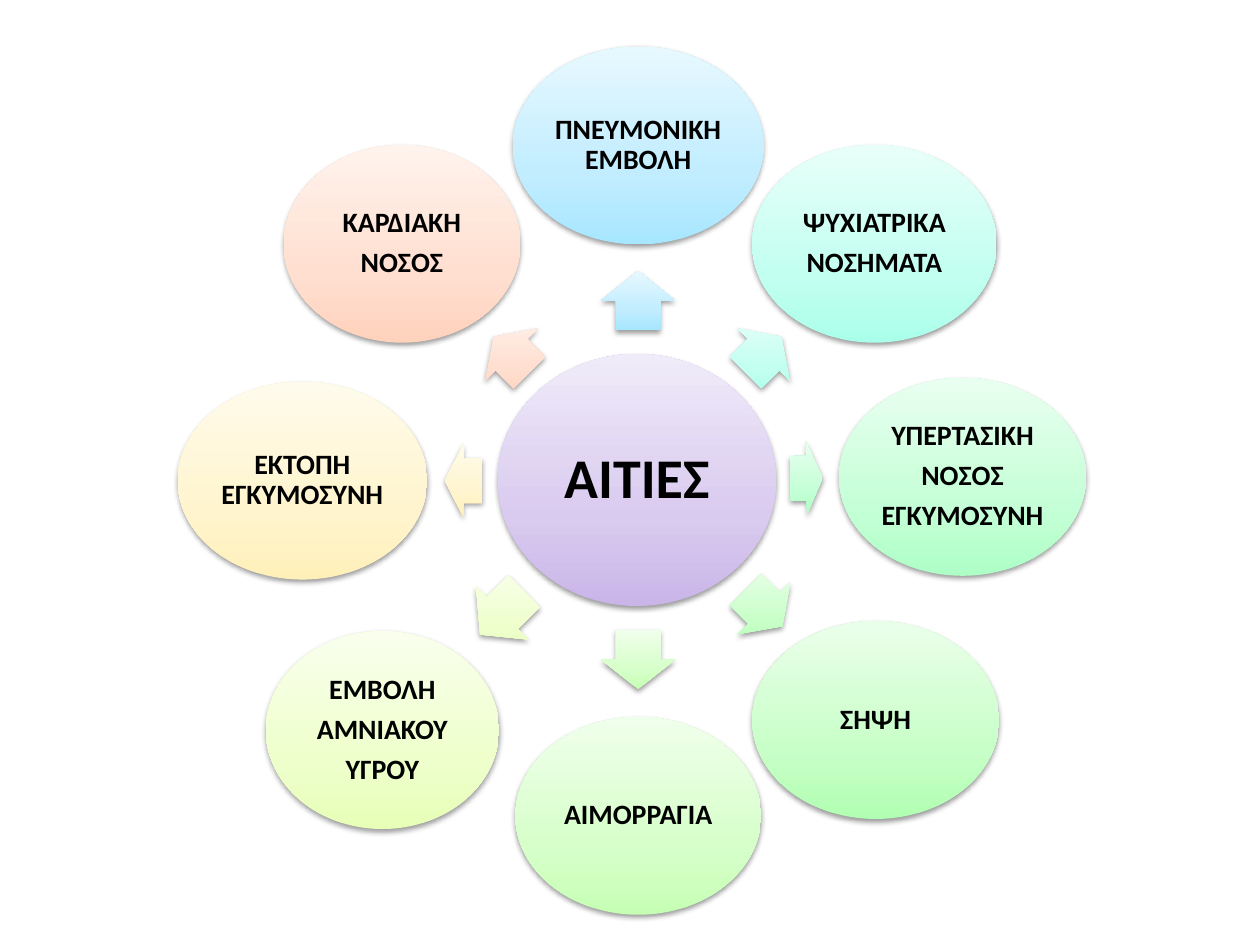
import pptx
import pptx.dml.color
import pptx.enum.shapes
import pptx.enum.text
import pptx.oxml
import pptx.oxml.ns
import pptx.util

RGBColor = pptx.dml.color.RGBColor
MSO_SHAPE = pptx.enum.shapes.MSO_SHAPE

BLACK = RGBColor(0x00, 0x00, 0x00)
VIOLET = RGBColor(0xC9, 0xB5, 0xE8)
SKY = RGBColor(0xA7, 0xE6, 0xFF)
AQUA = RGBColor(0xAA, 0xFF, 0xEA)
MINT = RGBColor(0xAE, 0xFF, 0xC6)
GREEN = RGBColor(0xB1, 0xFF, 0xB2)
SPRING = RGBColor(0xC6, 0xFF, 0xB4)
LIME = RGBColor(0xE7, 0xFF, 0xB7)
YELLOW = RGBColor(0xFF, 0xF0, 0xBA)
PEACH = RGBColor(0xFF, 0xD2, 0xBD)

COLUMNS, ROWS = 100, 75
CAUSE_HEIGHT, ARROW_HEIGHT = 15.7, 5.9
GRADIENT_STOPS = ((0, 1), (35, 0.71), (100, 0.27))

# lines, colour, ellipse (centre column, centre row, width), arrow (centre column, centre row, length, angle)
CAUSES = (
    (("ΠΝΕΥΜΟΝΙΚΗ ΕΜΒΟΛΗ",), SKY, (50.65, 11.55, 19.9), (50.65, 23.85, 4.7, 270)),
    (("ΨΥΧΙΑΤΡΙΚΑ", "ΝΟΣΗΜΑΤΑ"), AQUA, (69.4, 19.35, 19.4), (60.6, 28.15, 4, 315)),
    (("ΥΠΕΡΤΑΣΙΚΗ", "ΝΟΣΟΣ", "ΕΓΚΥΜΟΣΥΝΗ"), MINT, (76.4, 37.85, 19.6), (64, 37.95, 2.6, 359.2)),
    (("ΣΗΨΗ",), GREEN, (69.5, 57.15, 19.6), (60.65, 48.25, 4.1, 45.1)),
    (("ΑΙΜΟΡΡΑΓΙΑ",), SPRING, (50.65, 64.75, 19.5), (50.65, 52.35, 4.7, 90)),
    (("ΕΜΒΟΛΗ", "ΑΜΝΙΑΚΟΥ", "ΥΓΡΟΥ"), LIME, (30.35, 57.95, 18.5), (39.85, 48.65, 4.9, 135.6)),
    (("ΕΚΤΟΠΗ ΕΓΚΥΜΟΣΥΝΗ",), YELLOW, (24, 38.15, 19.8), (36.8, 38.15, 3, 180)),
    (("ΚΑΡΔΙΑΚΗ", "ΝΟΣΟΣ"), PEACH, (31.9, 19.35, 18.8), (40.6, 28.15, 4, 225.2)),
)


class RadialSlide:
    """Draws softly shaded shapes on one slide, placed by their centres on a grid."""

    def __init__(self, presentation):
        self.slide = presentation.slides.add_slide(presentation.slide_layouts[6])
        self.column = presentation.slide_width / COLUMNS
        self.row = presentation.slide_height / ROWS
        self.font = "Calibri"

    def shade(self, shape, colour):
        stops = ""
        for position, strength in GRADIENT_STOPS:
            tint = RGBColor(*(round(255 - (255 - channel) * strength) for channel in colour))
            stops += f'<a:gs pos="{position * 1000}"><a:srgbClr val="{tint}"/></a:gs>'
        namespace = pptx.oxml.ns.nsdecls("a")
        gradient = pptx.oxml.parse_xml(
            f'<a:gradFill {namespace} rotWithShape="0"><a:gsLst>{stops}</a:gsLst>'
            '<a:lin ang="16200000" scaled="0"/></a:gradFill>')
        shadow = pptx.oxml.parse_xml(
            f'<a:outerShdw {namespace} blurRad="{pptx.util.Pt(3.1)}" dist="{pptx.util.Pt(1.6)}"'
            ' dir="5400000" rotWithShape="0"><a:srgbClr val="000000">'
            '<a:alpha val="38000"/></a:srgbClr></a:outerShdw>')
        shape.line.fill.background()
        shape.fill.background()
        shape.shadow.inherit = False
        properties = shape.element.spPr
        properties.replace(properties.find(pptx.oxml.ns.qn("a:noFill")), gradient)
        properties.find(pptx.oxml.ns.qn("a:effectLst")).append(shadow)

    def shape(self, kind, centre_column, centre_row, width, height, colour):
        shape = self.slide.shapes.add_shape(
            kind,
            round((centre_column - width / 2) * self.column),
            round((centre_row - height / 2) * self.row),
            round(width * self.column),
            round(height * self.row))
        self.shade(shape, colour)
        return shape

    def arrow(self, centre_column, centre_row, length, angle, colour):
        arrow = self.shape(MSO_SHAPE.RIGHT_ARROW, centre_column, centre_row,
                           length, ARROW_HEIGHT, colour)
        arrow.adjustments[0] = 0.6
        arrow.adjustments[1] = 0.5
        arrow.rotation = angle

    def ellipse(self, centre_column, centre_row, width, height, colour, lines, size, inset):
        ellipse = self.shape(MSO_SHAPE.OVAL, centre_column, centre_row, width, height, colour)
        frame = ellipse.text_frame
        frame.word_wrap = True
        frame.vertical_anchor = pptx.enum.text.MSO_ANCHOR.MIDDLE
        frame.margin_left = frame.margin_right = pptx.util.Inches(inset)
        frame.margin_top = frame.margin_bottom = pptx.util.Inches(inset)
        for index, line in enumerate(lines):
            paragraph = frame.add_paragraph() if index else frame.paragraphs[0]
            paragraph.alignment = pptx.enum.text.PP_ALIGN.CENTER
            paragraph.line_spacing = 0.9
            paragraph.space_after = pptx.util.Pt(0.35 * size)
            run = paragraph.add_run()
            run.text = line
            run.font.name = self.font
            run.font.size = pptx.util.Pt(size)
            run.font.bold = True
            run.font.color.rgb = BLACK


def main():
    presentation = pptx.Presentation()
    presentation.slide_width = pptx.util.Inches(10)
    presentation.slide_height = pptx.util.Inches(7.5)
    radial = RadialSlide(presentation)
    radial.ellipse(50.55, 38.1, 22.1, 20, VIOLET, ("ΑΙΤΙΕΣ",), 32, 0.04)
    for lines, colour, (column, row, width), arrow in CAUSES:
        radial.arrow(*arrow, colour)
        radial.ellipse(column, row, width, CAUSE_HEIGHT, colour, lines, 16, 0.02)
    presentation.save("out.pptx")


if __name__ == "__main__":
    main()
